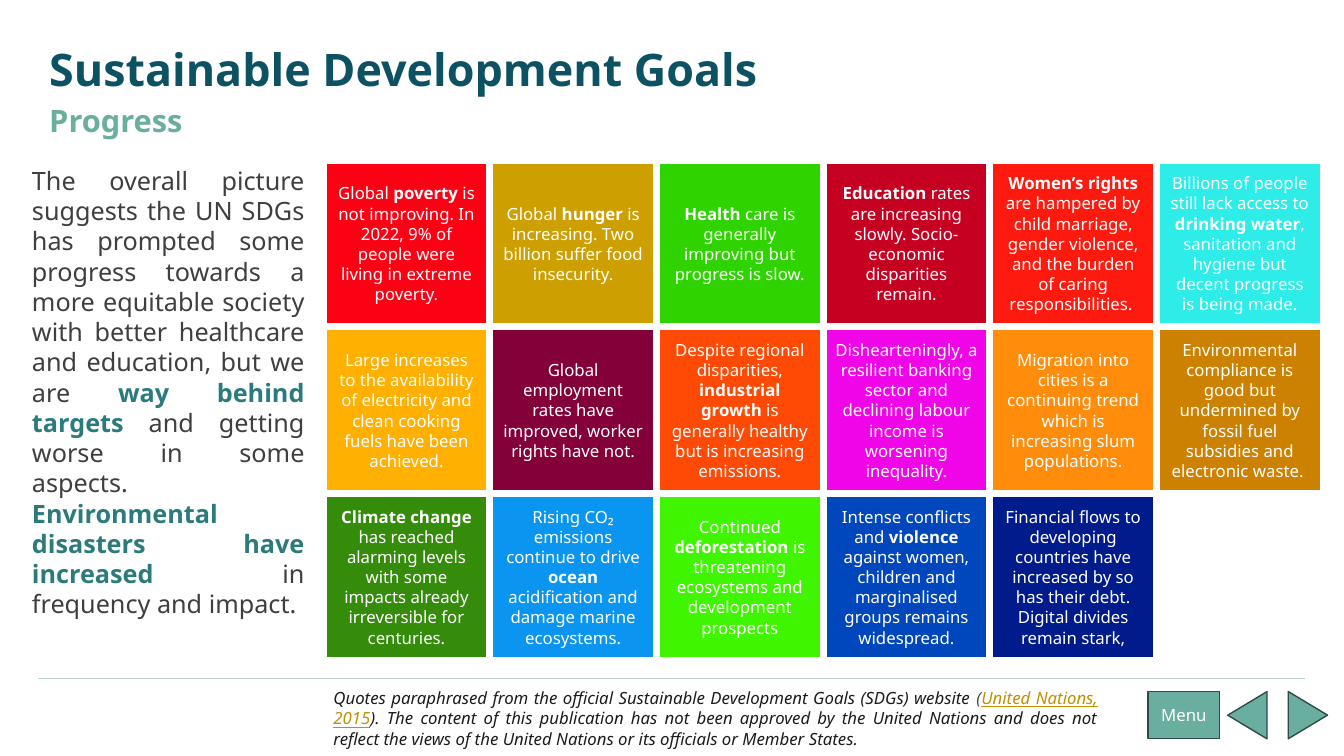
from lxml import etree
from pptx import Presentation
from pptx.dml.color import RGBColor
from pptx.enum.shapes import MSO_CONNECTOR, MSO_SHAPE
from pptx.enum.text import MSO_ANCHOR as ANCHOR, PP_ALIGN as ALIGN
from pptx.oxml.ns import qn
from pptx.util import Pt

# Content: "|" separates the runs of a paragraph
TITLE = "Sustainable Development Goals"
SUBTITLE = "Progress"
SUMMARY = (
    "The overall picture suggests the UN SDGs has prompted some progress towards "
    "a more equitable society with better healthcare and education, but we are "
    "|way behind targets |and getting worse in some aspects. "
    "|Environmental disasters have increased |in frequency and impact. "
)
SOURCE = (
    "Quotes paraphrased from the official Sustainable Development Goals (SDGs) "
    "website |(|United Nations, 2015|). The content of this publication has not "
    "been approved by the United Nations and does not reflect the views of the "
    "United Nations or its officials or Member States."
)
GOALS = [
    ("FC0114", "Global |poverty| is not improving. In 2022, 9% of people were living in extreme poverty."),
    ("CD9F01", "Global |hunger| is increasing. Two billion suffer food insecurity."),
    ("2FD300", "|Health| care is generally improving but progress is slow."),
    ("C60021", "|Education| rates are increasing slowly. Socio-economic disparities remain."),
    ("FE1A0F", "|Women’s rights |are hampered by child marriage, gender violence, "
               "and the burden of caring responsibilities. "),
    ("2EEDE8", "Billions of people still lack access to |drinking water|, sanitation "
               "and hygiene but decent progress is being made."),
    ("FFB001", "Large increases to the availability of electricity and clean cooking "
               "fuels have been achieved."),
    ("840039", "Global employment rates have improved, worker rights have not."),
    ("FF4A05", "Despite regional disparities, |industrial growth |is generally healthy "
               "but is increasing emissions."),
    ("F005E8", "Dishearteningly, a resilient banking sector and declining labour "
               "income is worsening inequality."),
    ("FF8C0B", "Migration into cities is a continuing trend which is increasing slum populations."),
    ("CC8101", "Environmental compliance is good but undermined by fossil fuel "
               "subsidies and electronic waste. "),
    ("358C0A", "|Climate change |has reached alarming levels with some impacts "
               "already irreversible for centuries."),
    ("0A95F0", "Rising CO₂ emissions continue to drive |ocean| acidification and "
               "damage marine ecosystems."),
    ("3FF500", "Continued |deforestation| is threatening ecosystems and development prospects"),
    ("0047BD", "Intense conflicts and |violence |against women, children and "
               "marginalised groups remains widespread."),
    ("001B8C", "Financial flows to developing countries have increased by so has "
               "their debt. Digital divides remain stark,"),
]
COLORS = {
    "title": "0D5263", "mint": "6AAEA0", "body": "3F3F3F", "accent": "2B7A7C",
    "source": "1C1C1C", "bracket": "4A4A4A", "link": "BF9000",
    "rule": "BCD3D0", "outline": "2E4C46", "white": "FFFFFF",
}
FONT = "Noto Sans"
COLUMNS = 6
TILE, PITCH = 116, 119.05
GRID_LEFT, GRID_TOP = 232.4, 116

# Run styles, taken in turn along a paragraph
BOLD = ({}, {"bold": True})
ACCENT = ({}, {"bold": True, "color": "accent"})
CITATION = ({}, {"color": "bracket"}, {"color": "link", "underline": True}, {})

prs = Presentation()
prs.slide_width, prs.slide_height = Pt(960), Pt(540)
s = prs.slides.add_slide(prs.slide_layouts[6])


def rgb(value):
    return RGBColor.from_string(value)


def write(tf, text, size, color, align=ALIGN.LEFT, styles=BOLD, bold=None, italic=None, spacing=None):
    tf.word_wrap = True
    p = tf.paragraphs[0]
    p.alignment = align
    p.line_spacing = spacing
    p.font.name, p.font.size = FONT, Pt(size)
    p.font.bold, p.font.italic = bold, italic
    p.font.color.rgb = rgb(COLORS[color])
    for i, part in enumerate(text.split("|")):
        if not part:
            continue
        r = p.add_run()
        r.text = part
        style = styles[i % len(styles)]
        if "bold" in style:
            r.font.bold = True
        if "underline" in style:
            r.font.underline = True
        if "color" in style:
            r.font.color.rgb = rgb(COLORS[style["color"]])


def add_text(box, *args, **kwargs):
    tf = s.shapes.add_textbox(*map(Pt, box)).text_frame
    write(tf, *args, **kwargs)
    return tf


def add_box(kind, box, fill, line, width):
    sp = s.shapes.add_shape(kind, *map(Pt, box))
    sp.shadow.inherit = False
    sp.fill.solid()
    sp.fill.fore_color.rgb = rgb(fill)
    sp.line.color.rgb = rgb(line)
    sp.line.width = Pt(width)
    sp.text_frame.vertical_anchor = ANCHOR.MIDDLE
    return sp


# Footer rule
rule = s.shapes.add_connector(MSO_CONNECTOR.STRAIGHT, Pt(27.4), Pt(484.6), Pt(932.4), Pt(484.6))
rule.line.color.rgb = rgb(COLORS["rule"])
rule.line.width = Pt(1.1)
etree.SubElement(rule.element.spPr, qn("a:effectLst"))

# Headings and summary
add_text((28.1, 28.8, 763, 40), TITLE, 32, "title", bold=True, spacing=0.95)
add_text((28.1, 71.3, 763, 34), SUBTITLE, 22, "mint", bold=True, spacing=0.95)
add_text((15.8, 114.5, 208.8, 342.7), SUMMARY, 18, "body", ALIGN.JUSTIFY, ACCENT)

# Goal tiles
for i, (fill, text) in enumerate(GOALS):
    row, col = divmod(i, COLUMNS)
    box = (GRID_LEFT + col * PITCH, GRID_TOP + row * PITCH, TILE, TILE)
    tile = add_box(MSO_SHAPE.RECTANGLE, box, fill, COLORS["white"], 2)
    write(tile.text_frame, text, 12, "white", ALIGN.CENTER)

# Source note
note = add_text((231.1, 491, 560.2, 43.9), SOURCE, 12, "source", ALIGN.JUSTIFY, CITATION, italic=True)
note.margin_top = note.margin_bottom = 0
note.vertical_anchor = ANCHOR.MIDDLE

# Navigation buttons
BUTTON = (COLORS["mint"], COLORS["outline"], 1)
menu = add_box(MSO_SHAPE.RECTANGLE, (820.1, 493.9, 51.1, 33.8), *BUTTON)
write(menu.text_frame, "Menu", 12, "white", ALIGN.CENTER)
for left, angle in ((874.1, 270), (917.3, 90)):
    arrow = add_box(MSO_SHAPE.ISOSCELES_TRIANGLE, (left, 496.8, 33.8, 28.1), *BUTTON)
    arrow.rotation = angle

prs.save("out.pptx")
